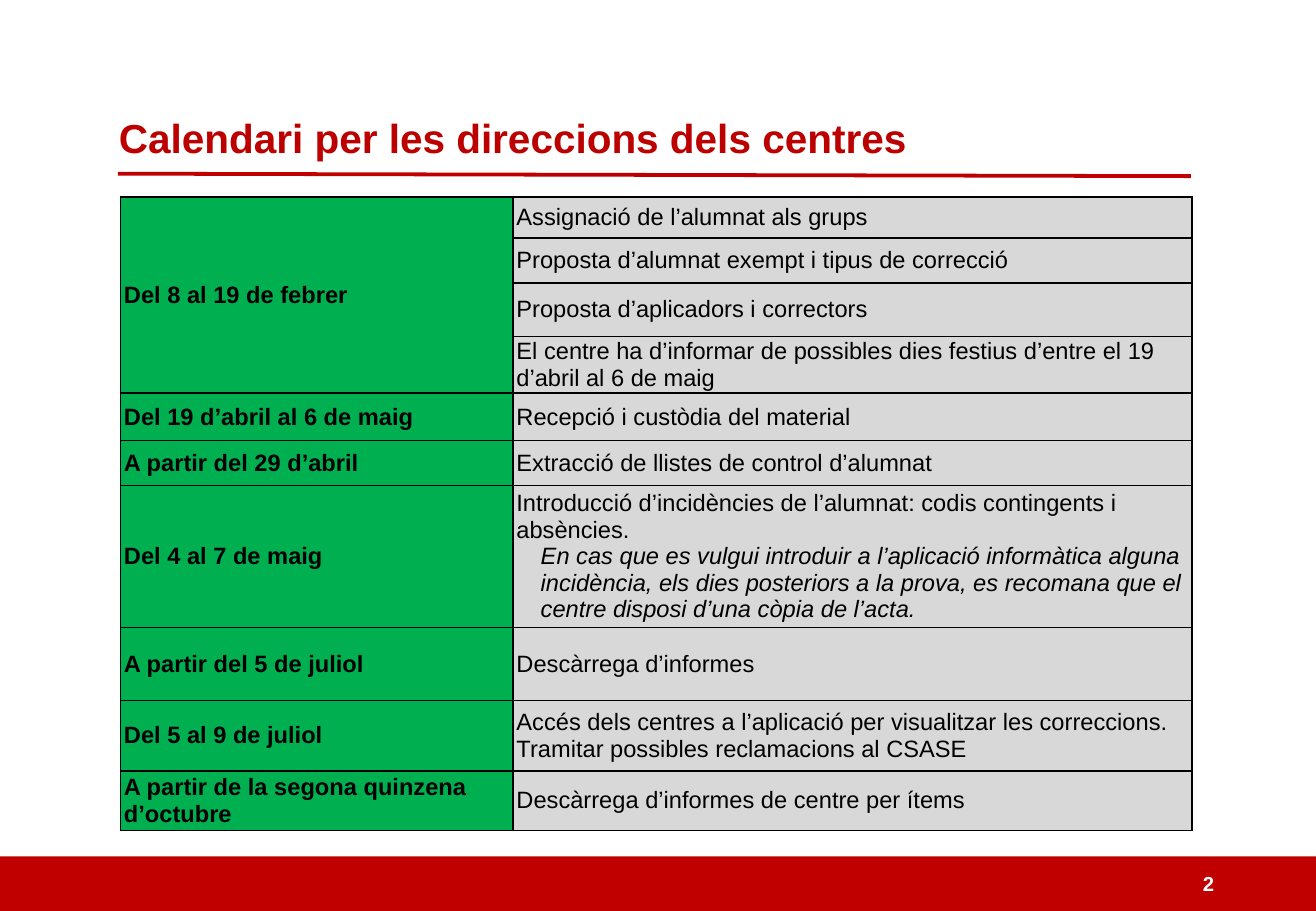
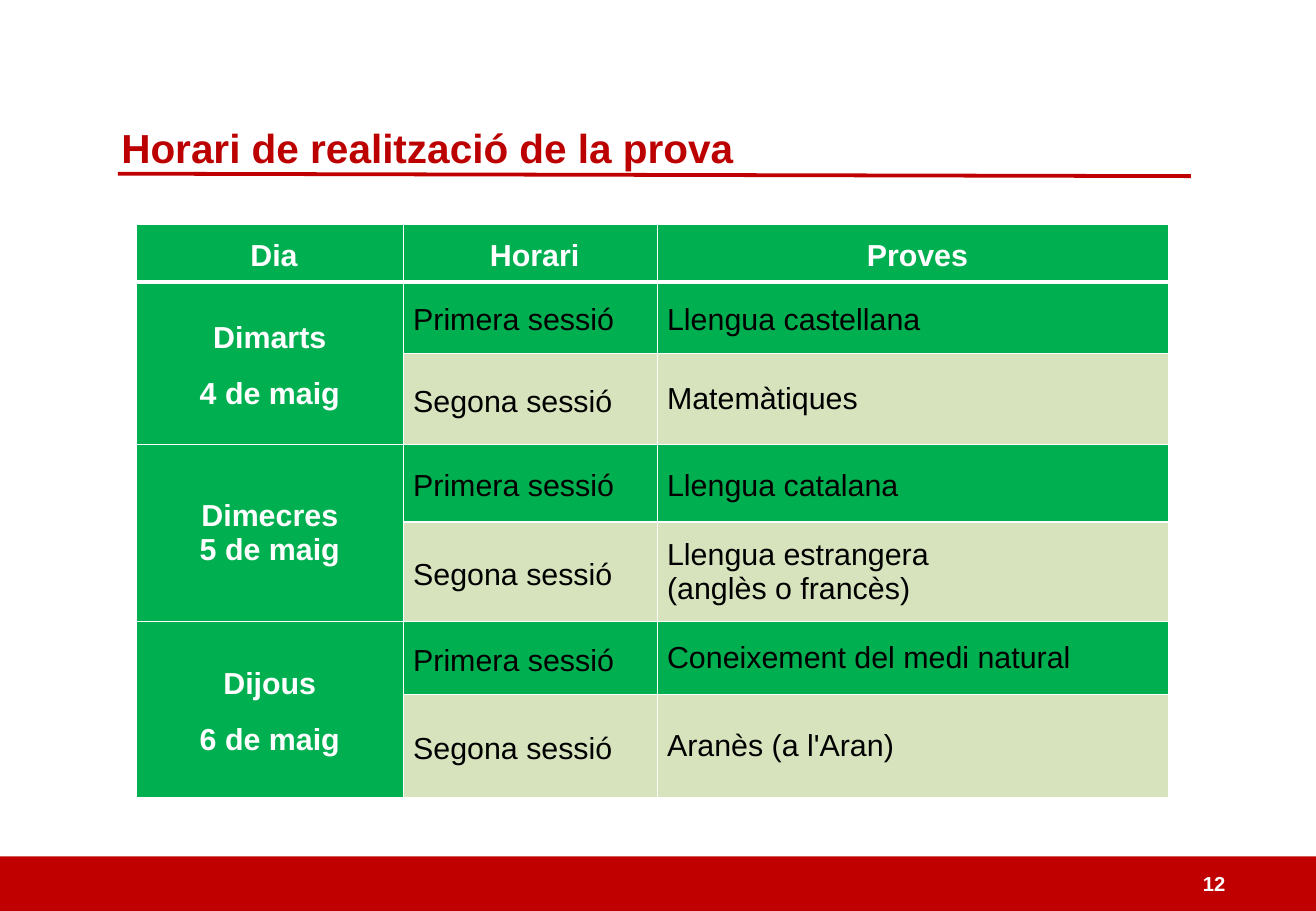
"""Build the two calendar slides of the assessment presentation."""
from lxml import etree
from pptx import Presentation
from pptx import util as u
from pptx.dml.color import RGBColor
from pptx.enum import shapes, text
from pptx.oxml import ns

COLORS = {"band": "C00000", "title": "BC0000", "green": "00B050", "gray": "D8D8D8",
          "pale": "D6E3BC", "black": "000000", "white": "FFFFFF"}
FONT = "Arial"
WIDTH, HEIGHT = 10.83, 7.5


class Deck:
    def __init__(self):
        self.prs = Presentation()
        self.prs.slide_width = u.Inches(WIDTH)
        self.prs.slide_height = u.Inches(HEIGHT)
        self.slide = None

    def color(self, name):
        return RGBColor.from_string(COLORS[name])

    def style(self, paragraph, size, color, bold=False):
        for run in paragraph.runs:
            font = run.font
            font.name, font.size, font.bold = FONT, u.Pt(size), bold
            font.color.rgb = self.color(color)

    def start(self, title, number, left, top):
        self.slide = self.prs.slides.add_slide(self.prs.slide_layouts[6])
        self.band()
        self.rule()
        self.label(str(number), (9.8, 7.11, 0.91, 0.33), 12, "white", text.MSO_ANCHOR.MIDDLE)
        self.label(title, (left, top, 7, 0.5), 24, "title")

    def band(self):
        band = self.slide.shapes.add_shape(
            shapes.MSO_SHAPE.RECTANGLE, 0, u.Inches(7.05), u.Inches(WIDTH), u.Inches(0.47))
        band.shadow.inherit = False
        band.fill.solid()
        band.fill.fore_color.rgb = self.color("band")
        band.line.fill.background()

    def rule(self):
        rule = self.slide.shapes.add_connector(
            shapes.MSO_CONNECTOR.STRAIGHT,
            u.Inches(0.97), u.Inches(1.43), u.Inches(9.8), u.Inches(1.45))
        rule.line.color.rgb = self.color("band")
        rule.line.width = u.Pt(2.25)
        etree.SubElement(rule._element.spPr, ns.qn("a:effectLst"))

    def label(self, words, box, size, color, anchor=text.MSO_ANCHOR.TOP):
        frame = self.slide.shapes.add_textbox(*map(u.Inches, box)).text_frame
        frame.word_wrap = True
        frame.vertical_anchor = anchor
        frame.text = words
        self.style(frame.paragraphs[0], size, color, True)

    def table(self, rows, left, top, widths, heights):
        table = self.slide.shapes.add_table(
            len(rows), len(widths), u.Inches(left), u.Inches(top),
            u.Inches(sum(widths)), u.Inches(sum(heights))).table
        table.first_row = table.horz_banding = False
        for column, width in zip(table.columns, widths):
            column.width = u.Inches(width)
        for row, height in zip(table.rows, heights):
            row.height = u.Inches(height)
        for r, row in enumerate(rows):
            for c, words in enumerate(row):
                if words is not None:
                    table.cell(r, c).text_frame.text = words
        for r, row in enumerate(rows):
            if row[0] is not None:
                last = r
                while last + 1 < len(rows) and rows[last + 1][0] is None:
                    last += 1
                if last > r:
                    table.cell(r, 0).merge(table.cell(last, 0))
        return table

    def cell(self, cell, fill, border, margins, size, color, bold, top=1, bottom=1):
        cell.vertical_anchor = text.MSO_ANCHOR.MIDDLE
        (cell.margin_left, cell.margin_top,
         cell.margin_right, cell.margin_bottom) = map(u.Inches, margins)
        props = cell._tc.get_or_add_tcPr()
        for side, width in (("L", 1), ("R", 1), ("T", top), ("B", bottom)):
            line = etree.SubElement(props, ns.qn("a:ln" + side), w=str(u.Pt(width)))
            solid = etree.SubElement(line, ns.qn("a:solidFill"))
            etree.SubElement(solid, ns.qn("a:srgbClr"), val=COLORS[border])
        cell.fill.solid()
        cell.fill.fore_color.rgb = self.color(fill)
        for paragraph in cell.text_frame.paragraphs:
            self.style(paragraph, size, color, bold)


def calendar(deck):
    deck.start("Calendari per les direccions dels centres", 2, 0.88, 0.88)
    tasks = [
        ("Del 8 al 19 de febrer", "Assignació de l’alumnat als grups"),
        (None, "Proposta d’alumnat exempt i tipus de correcció"),
        (None, "Proposta d’aplicadors i correctors"),
        (None, "El centre ha d’informar de possibles dies festius d’entre el 19 d’abril "
               "al 6 de maig"),
        ("Del 19 d’abril al 6 de maig", "Recepció i custòdia del material"),
        ("A partir del 29 d’abril", "Extracció de llistes de control d’alumnat"),
        ("Del 4 al 7 de maig",
         "Introducció d’incidències de l’alumnat: codis contingents i absències.\n"
         "En cas que es vulgui introduir a l’aplicació informàtica alguna incidència, "
         "els dies posteriors a la prova, es recomana que el centre disposi d’una còpia "
         "de l’acta."),
        ("A partir del 5 de juliol", "Descàrrega d’informes"),
        ("Del 5 al 9 de juliol",
         "Accés dels centres a l’aplicació per visualitzar les correccions.\n"
         "Tramitar possibles reclamacions al CSASE"),
        ("A partir de la segona quinzena d’octubre",
         "Descàrrega d’informes de centre per ítems"),
    ]
    heights = [0.34, 0.37, 0.44, 0.46, 0.39, 0.37, 1.17, 0.6, 0.58, 0.49]
    table = deck.table(tasks, 0.99, 1.62, [3.23, 5.59], heights)
    for r in range(len(tasks)):
        for c, fill in enumerate(("green", "gray")):
            deck.cell(table.cell(r, c), fill, "black", (0.03, 0, 0.03, 0), 14, "black", c == 0)
    advice = table.cell(6, 1).text_frame.paragraphs[1]
    advice._p.get_or_add_pPr().set("marL", str(u.Inches(0.2)))
    advice.runs[0].font.italic = True


def timetable(deck):
    deck.start("Horari de realització de la prova", 12, 0.9, 0.96)
    first, second = "Primera sessió", "Segona sessió"
    sessions = [
        ("Dia", "Horari", "Proves"),
        ("Dimarts\n4 de maig", first, "Llengua castellana"),
        (None, second, "Matemàtiques"),
        ("Dimecres\n5 de maig", first, "Llengua catalana"),
        (None, second, "Llengua estrangera\n(anglès o francès)"),
        ("Dijous\n6 de maig", first, "Coneixement del medi natural"),
        (None, second, "Aranès (a l'Aran)"),
    ]
    single_spaced = {(2, 2), (3, 0), (4, 2), (5, 2), (6, 2)}
    table = deck.table(sessions, 1.12, 1.85, [2.2, 2.09, 4.21],
                       [0.47, 0.59, 0.75, 0.64, 0.82, 0.6, 0.85])
    for r in range(len(sessions)):
        for c in range(3):
            cell = table.cell(r, c)
            heading = r == 0 or c == 0
            fill = "green" if heading or r % 2 else "pale"
            indent = 0.01 if c == 0 and r else 0.08
            deck.cell(cell, fill, "white", (indent, 0.01, 0.01, 0.01), 18,
                      "white" if heading else "black", heading,
                      top=3 if r == 1 else 1, bottom=3 if r == 0 else 1)
            for n, paragraph in enumerate(cell.text_frame.paragraphs):
                if heading:
                    paragraph.alignment = text.PP_ALIGN.CENTER
                if (r, c) not in single_spaced:
                    paragraph.line_spacing = 1.15
                    if n:
                        paragraph.space_before = u.Pt(10)


def main():
    deck = Deck()
    calendar(deck)
    timetable(deck)
    deck.prs.save("out.pptx")


if __name__ == "__main__":
    main()
